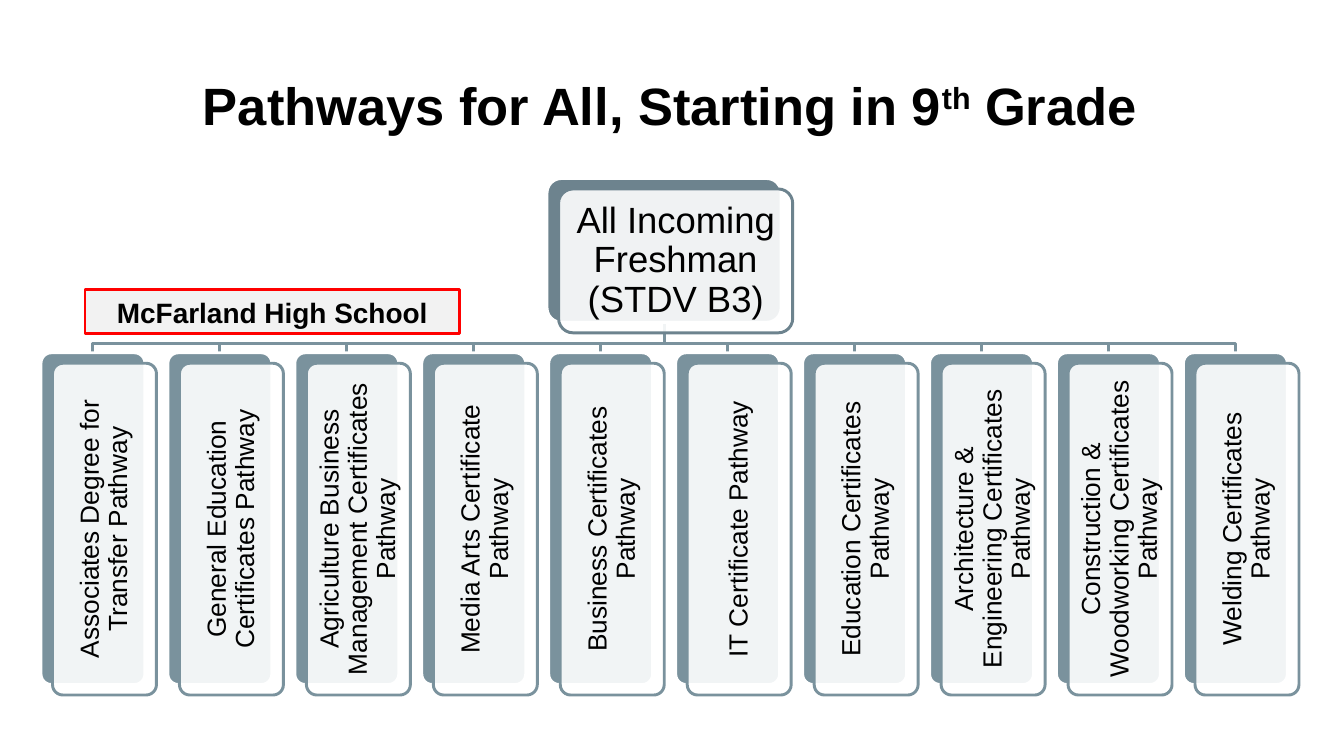
from lxml.etree import SubElement
from pptx import Presentation
from pptx.dml.color import RGBColor
from pptx.enum.shapes import MSO_SHAPE as Preset
from pptx.enum.text import MSO_ANCHOR as Anchor, PP_ALIGN as Align
from pptx.oxml.ns import qn
from pptx.util import Inches, Pt

BLACK = RGBColor(0x00, 0x00, 0x00)
WHITE = RGBColor(0xFF, 0xFF, 0xFF)
SLATE = RGBColor(0x6D, 0x83, 0x8E)
BLUE_GRAY = RGBColor(0x7A, 0x92, 0x9D)
PALE_GRAY = RGBColor(0xF2, 0xF2, 0xF2)
RED = RGBColor(0xFF, 0x00, 0x00)

PATHWAYS = [
    "Associates Degree for Transfer Pathway",
    "General Education Certificates Pathway",
    "Agriculture Business Management Certificates Pathway",
    "Media Arts Certificate Pathway",
    "Business Certificates Pathway",
    "IT Certificate Pathway",
    "Education Certificates Pathway",
    "Architecture & Engineering Certificates Pathway",
    "Construction & Woodworking Certificates Pathway",
    "Welding Certificates Pathway",
]
CARD_OFFSET_X, CARD_OFFSET_Y = 0.11, 0.1
CARD_WIDTH, CARD_HEIGHT = 0.99, 3.16
CARD_PITCH = 1.209
BUS_RISE = 0.09


def set_attributes(target, values):
    for name, value in values.items():
        setattr(target, name, value)


def write_text(shape, runs, size, bold=False, inset_x=0.1, inset_y=0.1, spacing=1.0):
    frame = shape.text_frame
    set_attributes(frame, {
        "word_wrap": True, "vertical_anchor": Anchor.MIDDLE,
        "margin_left": Inches(inset_x), "margin_right": Inches(inset_x),
        "margin_top": Inches(inset_y), "margin_bottom": Inches(inset_y),
    })
    paragraph = frame.paragraphs[0]
    set_attributes(paragraph, {"alignment": Align.CENTER, "line_spacing": spacing})
    for text in runs:
        run = paragraph.add_run()
        run.text = text
        set_attributes(run.font, {"name": "Arial", "size": Pt(size), "bold": bold})
        run.font.color.rgb = BLACK
    return paragraph


def add_panel(slide, box, preset, fill, line):
    shape = slide.shapes.add_shape(preset, *map(Inches, box))
    shape.shadow.inherit = False
    shape.fill.solid()
    shape.fill.fore_color.rgb = fill
    shape.line.color.rgb = line
    shape.line.width = Pt(2)
    if preset == Preset.ROUNDED_RECTANGLE:
        shape.adjustments[0] = 0.1
    return shape


def add_card(slide, box, text, color, size, inset, vertical=False):
    left, top, width, height = box
    add_panel(slide, box, Preset.ROUNDED_RECTANGLE, color, WHITE)
    front_box = left + CARD_OFFSET_X, top + CARD_OFFSET_Y, width, height
    front = add_panel(slide, front_box, Preset.ROUNDED_RECTANGLE, WHITE, color)
    fill_color = front.element.spPr.find(qn("a:solidFill")).find(qn("a:srgbClr"))
    SubElement(fill_color, qn("a:alpha")).set("val", "90000")
    write_text(front, [text], size, inset_x=inset, inset_y=inset, spacing=0.9)
    if vertical:
        front.element.txBody.find(qn("a:bodyPr")).set("vert", "vert270")


def add_branch(slide, start, end):
    bus_y = end[1] - BUS_RISE
    points = [start, (start[0], bus_y), (end[0], bus_y), end]
    corners = [(Inches(x), Inches(y)) for x, y in points]
    builder = slide.shapes.build_freeform(*corners[0])
    builder.add_line_segments(corners[1:], close=False)
    branch = builder.convert_to_shape()
    branch.shadow.inherit = False
    branch.fill.background()
    branch.line.color.rgb = BLUE_GRAY
    branch.line.width = Pt(2)


def add_pathway_tree(slide, root_box, row_left, row_top):
    left, top, width, height = root_box
    root_bottom = left + width / 2, top + height
    card_lefts = [row_left + index * CARD_PITCH for index in range(len(PATHWAYS))]
    for card_left in reversed(card_lefts):
        add_branch(slide, root_bottom, (card_left + CARD_WIDTH / 2, row_top))
    add_card(slide, root_box, "All Incoming Freshman (STDV B3)", SLATE, 25, 0.1)
    for card_left, pathway in zip(card_lefts, PATHWAYS):
        card_box = card_left, row_top, CARD_WIDTH, CARD_HEIGHT
        add_card(slide, card_box, pathway, BLUE_GRAY, 18, 0.07, vertical=True)


def add_title(slide, box):
    title = slide.shapes.add_textbox(*map(Inches, box))
    runs = ["Pathways for All, Starting in 9", "th", " Grade"]
    paragraph = write_text(title, runs, 36, bold=True, inset_x=0.13, inset_y=0.13)
    paragraph.runs[1].font._element.set("baseline", "30000")


def add_school_label(slide, box):
    label = add_panel(slide, box, Preset.RECTANGLE, PALE_GRAY, RED)
    write_text(label, ["McFarland High School"], 19.2, bold=True, inset_y=0.05)


def main():
    presentation = Presentation()
    presentation.slide_width = Inches(12.8)
    presentation.slide_height = Inches(7.2)
    slide = presentation.slides.add_slide(presentation.slide_layouts[6])
    add_pathway_tree(slide, (5.21, 1.7, 2.23, 1.37), 0.39, 3.36)
    add_title(slide, (1.12, 0.52, 10.52, 0.95))
    add_school_label(slide, (0.81, 2.76, 3.57, 0.42))
    presentation.save("out.pptx")


if __name__ == "__main__":
    main()
